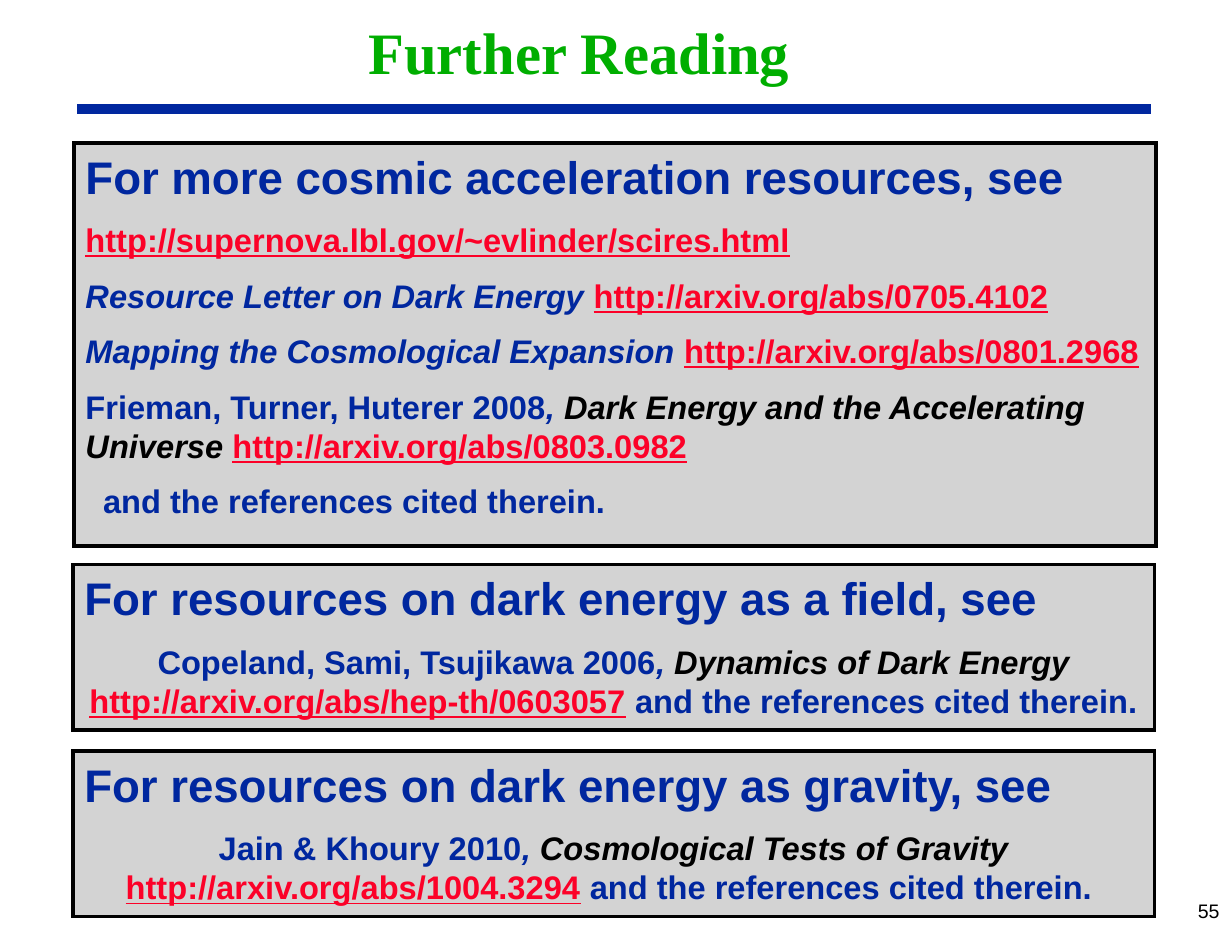
from dataclasses import dataclass

import pptx
import pptx.dml.color
import pptx.enum.shapes
import pptx.enum.text
import pptx.oxml
import pptx.util
from pptx.util import Inches

Align = pptx.enum.text.PP_ALIGN
Anchor = pptx.enum.text.MSO_ANCHOR
DRAWING = 'xmlns:a="http://schemas.openxmlformats.org/drawingml/2006/main"'


@dataclass(frozen=True)
class Theme:
    blue: str = "00279F"
    green: str = "00AE00"
    red: str = "FC0128"
    black: str = "000000"
    panel: str = "D3D3D3"
    sans: str = "Arial"
    serif: str = "Times New Roman"
    title_size: int = 36
    heading_size: int = 28
    body_size: int = 20
    number_size: int = 12
    rule_width: float = 6
    border_width: float = 2.25
    paragraph_gap: int = 10


THEME = Theme()

STYLES = {
    "plain": {},
    "italic": {"italic": True},
    "work": {"italic": True, "color": THEME.black},
    "link": {"underline": True, "color": THEME.red},
}

RESOURCES = [
    [("http://supernova.lbl.gov/~evlinder/scires.html", "link")],
    [("Resource Letter on Dark Energy ", "italic"),
     ("http://arxiv.org/abs/0705.4102", "link")],
    [("Mapping the Cosmological Expansion ", "italic"),
     ("http://arxiv.org/abs/0801.2968", "link")],
    [("Frieman, Turner, Huterer 2008", "plain"), (", ", "italic"),
     ("Dark Energy and the Accelerating Universe ", "work"),
     ("http://arxiv.org/abs/0803.0982", "link")],
    [("and the references cited therein.", "plain")],
]


def citation(authors, work, link, ending):
    return [(authors, "plain"), (", ", "italic"), (work + " ", "work"),
            (link, "link"), (ending, "plain")]


def rgb(color):
    return pptx.dml.color.RGBColor.from_string(color)


def set_font(font, name, size, color, bold=False):
    font.name = name
    font.size = pptx.util.Pt(size)
    font.bold = bold
    font.color.rgb = rgb(color)


def set_line(line, color, width):
    line.color.rgb = rgb(color)
    line.width = pptx.util.Pt(width)


def add_label(page, bounds, text, name, size, color, bold=False, wrap=True):
    box = page.shapes.add_textbox(*map(Inches, bounds))
    frame = box.text_frame
    frame.word_wrap = wrap
    frame.vertical_anchor = Anchor.TOP
    para = frame.paragraphs[0]
    para.text = text
    set_font(para.font, name, size, color, bold)
    return box


def add_title(page, text):
    box = add_label(page, (1.57, 0.17, 6.73, 0.62), text, THEME.serif,
                    THEME.title_size, THEME.green, bold=True)
    box.text_frame.vertical_anchor = Anchor.MIDDLE
    para = box.text_frame.paragraphs[0]
    para.alignment = Align.CENTER
    para.line_spacing = 0.85


def add_rule(page, left, right, top):
    rule = page.shapes.add_connector(
        pptx.enum.shapes.MSO_CONNECTOR.STRAIGHT,
        Inches(left), Inches(top), Inches(right), Inches(top))
    set_line(rule.line, THEME.blue, THEME.rule_width)
    rule._element.spPr.append(pptx.oxml.parse_xml(f"<a:effectLst {DRAWING}/>"))


def fill_paragraph(para, spans, size, alignment):
    para.alignment = alignment
    set_font(para.font, THEME.sans, size, THEME.blue, bold=True)
    for text, style in spans:
        span = para.add_run()
        span.text = text
        for key, value in STYLES[style].items():
            if key == "color":
                span.font.color.rgb = rgb(value)
            else:
                setattr(span.font, key, value)


def add_panel(page, bounds, heading, entries, alignment):
    box = page.shapes.add_shape(
        pptx.enum.shapes.MSO_SHAPE.RECTANGLE, *map(Inches, bounds))
    box.shadow.inherit = False
    box.fill.solid()
    box.fill.fore_color.rgb = rgb(THEME.panel)
    set_line(box.line, THEME.black, THEME.border_width)
    box.line._get_or_add_ln().append(
        pptx.oxml.parse_xml(f'<a:miter {DRAWING} lim="800000"/>'))
    frame = box.text_frame
    frame.word_wrap = True
    frame.vertical_anchor = Anchor.TOP
    fill_paragraph(frame.paragraphs[0], [(heading, "plain")],
                   THEME.heading_size, Align.LEFT)
    for spans in entries:
        para = frame.add_paragraph()
        para.space_before = pptx.util.Pt(THEME.paragraph_gap)
        fill_paragraph(para, spans, THEME.body_size, alignment)
    return box


def main():
    deck = pptx.Presentation()
    deck.slide_width, deck.slide_height = Inches(10.5), Inches(8)
    page = deck.slides.add_slide(deck.slide_layouts[6])

    add_rule(page, 0.66, 9.81, 0.93)
    add_label(page, (10.11, 7.61, 0.39, 0.3), "55", THEME.sans,
              THEME.number_size, THEME.black, wrap=False)
    add_title(page, "Further Reading")

    resources = add_panel(page, (0.63, 1.22, 9.22, 3.43),
                          "For more cosmic acceleration resources, see",
                          RESOURCES, Align.LEFT)
    closing = resources.text_frame.paragraphs[-1]
    closing._p.get_or_add_pPr().set("marL", str(Inches(0.15)))

    ending = " and the references cited therein."
    topics = [
        (4.81, "a field",
         citation("Copeland, Sami, Tsujikawa 2006", "Dynamics of Dark Energy",
                  "http://arxiv.org/abs/hep-th/0603057", ending)),
        (6.4, "gravity",
         citation("Jain & Khoury 2010", "Cosmological Tests of Gravity",
                  "http://arxiv.org/abs/1004.3294", ending + " ")),
    ]
    for top, subject, entry in topics:
        add_panel(page, (0.62, top, 9.22, 1.41),
                  f"For resources on dark energy as {subject}, see",
                  [entry], Align.CENTER)

    deck.save("out.pptx")


if __name__ == "__main__":
    main()
